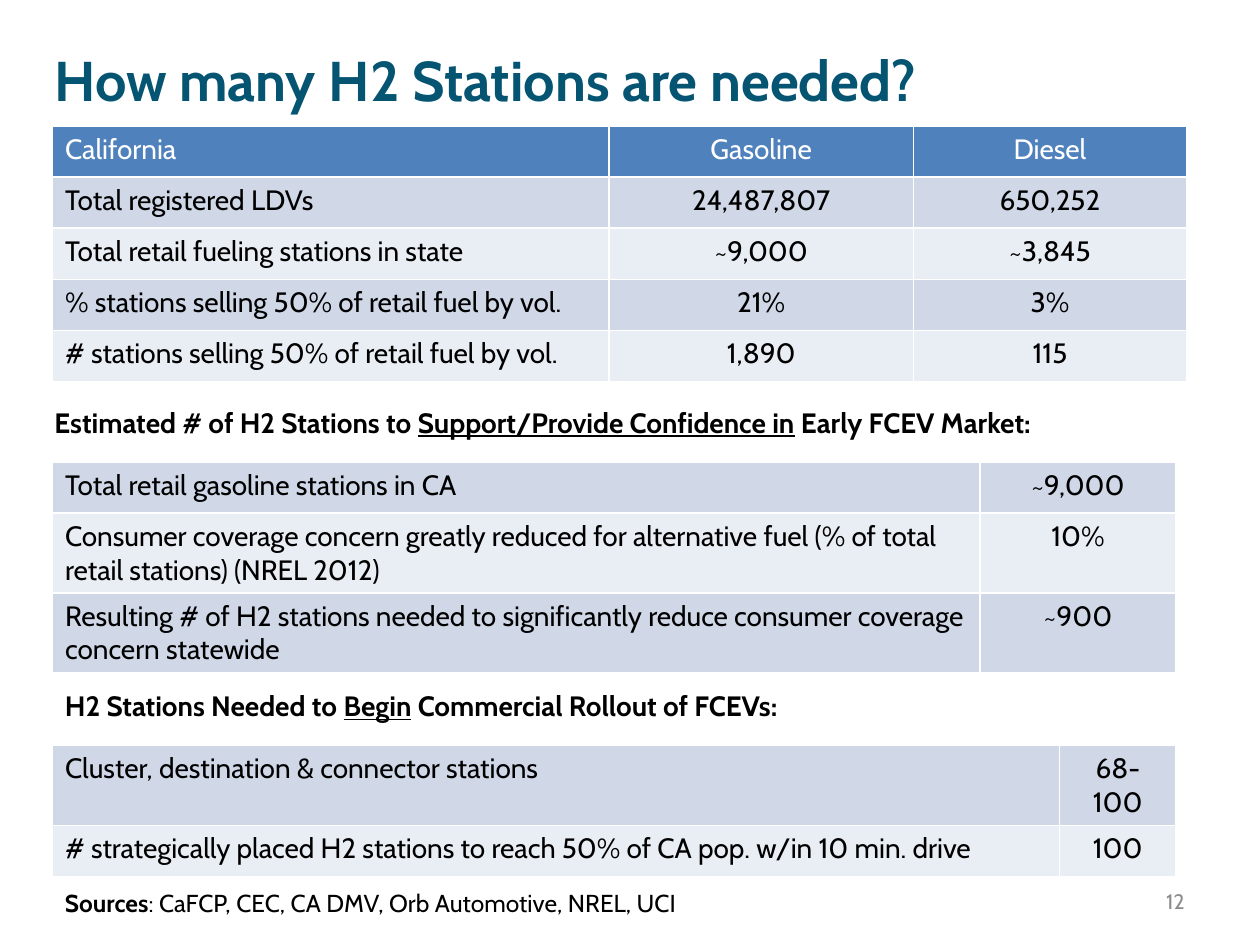
from lxml import etree
from pptx import Presentation
from pptx.dml.color import RGBColor
from pptx.enum import text
from pptx.oxml import ns
from pptx.util import Pt

FONT = "Cabin"
TEAL = RGBColor(0x04, 0x54, 0x72)
BLUE = RGBColor(0x4F, 0x81, 0xBD)
DARK_BAND = RGBColor(0xD0, 0xD8, 0xE8)
LIGHT_BAND = RGBColor(0xE9, 0xED, 0xF4)
WHITE = RGBColor(0xFF, 0xFF, 0xFF)
BLACK = RGBColor(0, 0, 0)
GREY = RGBColor(0x8C, 0x8C, 0x8C)

LEFT, CENTER, RIGHT = (text.PP_ALIGN.LEFT, text.PP_ALIGN.CENTER,
                       text.PP_ALIGN.RIGHT)
TOP, MIDDLE = text.MSO_ANCHOR.TOP, text.MSO_ANCHOR.MIDDLE
TABLE_LEFT = 30
ROW_HEIGHT = 29.2

FUEL_ROWS = [
    ("California", "Gasoline", "Diesel"),
    ("Total registered LDVs", "24,487,807", "650,252"),
    ("Total retail fueling stations in state", "~9,000", "~3,845"),
    ("% stations selling 50% of retail fuel by vol.", "21%", "3%"),
    ("# stations selling 50% of retail fuel by vol.", "1,890", "115"),
]
COVERAGE_ROWS = [
    ("Total retail gasoline stations in CA", "~9,000"),
    ("Consumer coverage concern greatly reduced for alternative fuel "
     "(% of total retail stations) (NREL 2012)", "10%"),
    ("Resulting # of H2 stations needed to significantly reduce consumer "
     "coverage concern statewide", "~900"),
]
ROLLOUT_ROWS = [
    ("Cluster, destination & connector stations", "68-100"),
    ("# strategically placed H2 stations to reach 50% of CA pop. "
     "w/in 10 min. drive", "100"),
]


def write(tf, *runs, size=16, color=BLACK, align=LEFT):
    """Fill the first paragraph; each run is (text, style), with b and u in style."""
    p = tf.paragraphs[0]
    p.alignment = align
    for content, style in runs:
        r = p.add_run()
        r.text = content
        r.font.name = FONT
        r.font.size = Pt(size)
        r.font.color.rgb = color
        r.font.bold = "b" in style
        r.font.underline = "u" in style


def add_text(slide, left, top, width, height, *runs, anchor=TOP, **fmt):
    box = slide.shapes.add_textbox(Pt(left), Pt(top), Pt(width), Pt(height))
    tf = box.text_frame
    tf.word_wrap = True
    tf.vertical_anchor = anchor
    write(tf, *runs, **fmt)


def add_borders(cell):
    tc_pr = cell._tc.get_or_add_tcPr()
    for i, side in enumerate(("lnL", "lnR", "lnT", "lnB")):
        ln = etree.Element(ns.qn(f"a:{side}"), w=str(Pt(1)))
        fill = etree.SubElement(ln, ns.qn("a:solidFill"))
        etree.SubElement(fill, ns.qn("a:srgbClr"), val=str(WHITE))
        tc_pr.insert(i, ln)


def add_table(slide, top, widths, rows, header=False):
    """Add a banded table: labels on the left, centred values after them."""
    frame = slide.shapes.add_table(
        len(rows), len(widths), Pt(TABLE_LEFT), Pt(top),
        Pt(sum(widths)), Pt(ROW_HEIGHT * len(rows)))
    table = frame.table
    table.first_row = header
    table.horz_banding = False
    for column, width in zip(table.columns, widths):
        column.width = Pt(width)
    for i, values in enumerate(rows):
        table.rows[i].height = Pt(ROW_HEIGHT)
        is_header = header and i == 0
        band = LIGHT_BAND if (i - header) % 2 else DARK_BAND
        for j, value in enumerate(values):
            cell = table.cell(i, j)
            cell.fill.solid()
            cell.fill.fore_color.rgb = BLUE if is_header else band
            add_borders(cell)
            write(cell.text_frame, (value, ""),
                  color=WHITE if is_header else BLACK,
                  align=CENTER if j else LEFT)


def main():
    prs = Presentation()
    prs.slide_width, prs.slide_height = Pt(720), Pt(540)
    slide = prs.slides.add_slide(prs.slide_layouts[6])

    add_text(slide, 24, 0, 648, 90, ("How many H2 Stations are needed?", "b"),
             size=32, color=TEAL, anchor=MIDDLE)
    add_table(slide, 72, (318, 174, 156), FUEL_ROWS, header=True)

    add_text(slide, 24, 228, 622, 26.6,
             ("Estimated # of H2 Stations to ", "b"),
             ("Support/Provide Confidence in", "bu"),
             (" Early FCEV Market:", "b"))
    add_table(slide, 264, (530, 112), COVERAGE_ROWS)

    add_text(slide, 30, 390, 459, 26.6,
             ("H2 Stations Needed to ", "b"),
             ("Begin", "bu"),
             (" Commercial Rollout of FCEVs:", "b"))
    add_table(slide, 426, (575.4, 66.6), ROLLOUT_ROWS)

    add_text(slide, 30, 504, 667, 24.2,
             ("Sources", "b"),
             (": CaFCP, CEC, CA DMV, Orb Automotive, NREL, UCI", ""), size=14)
    add_text(slide, 516, 500.5, 168, 28.8, ("12", ""),
             size=12, color=GREY, align=RIGHT, anchor=MIDDLE)

    prs.save("out.pptx")


if __name__ == "__main__":
    main()
